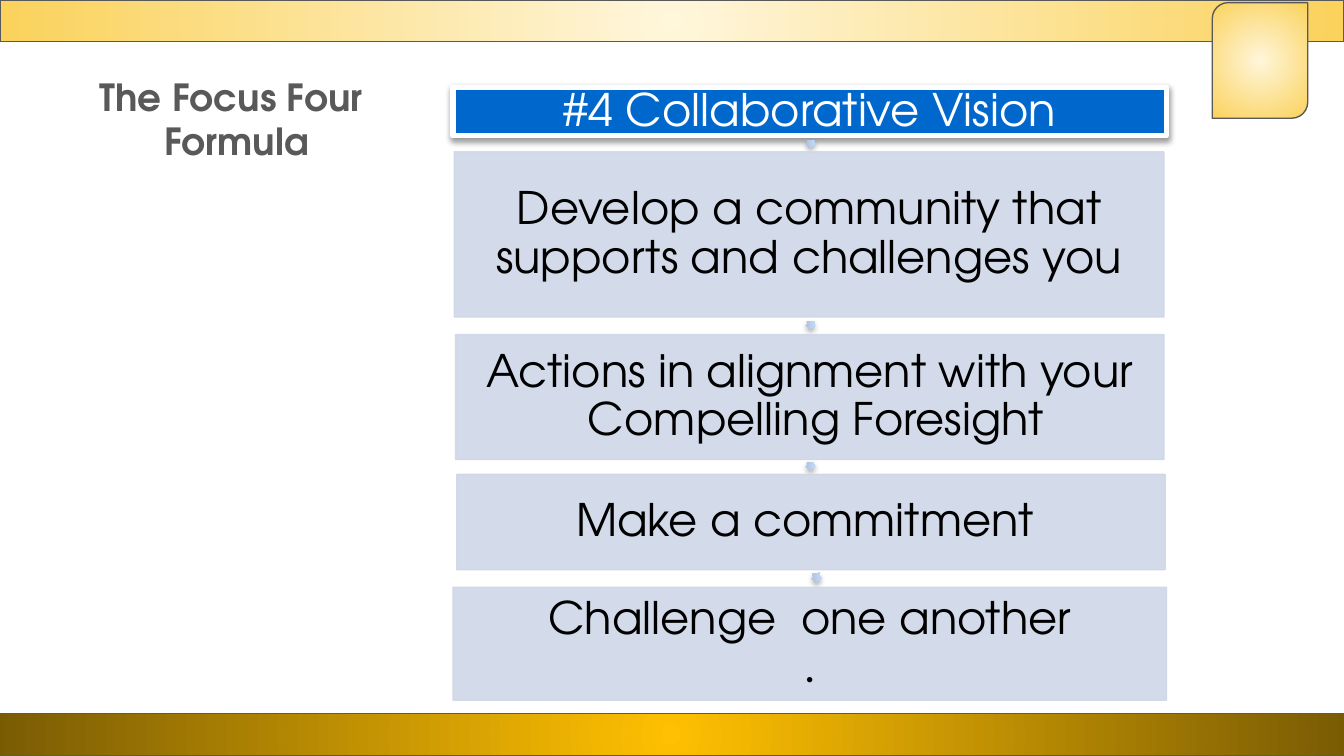
from lxml.etree import SubElement
from pptx import Presentation
from pptx.dml.color import RGBColor
from pptx.enum.shapes import MSO_SHAPE
from pptx.enum.text import MSO_ANCHOR, PP_ALIGN
from pptx.oxml.ns import qn
from pptx.util import Inches, Pt

FONT = "TeX Gyre Adventor"
GREY = "595959"
PALE_GOLD = ("FFF6DB", "FAD25C")
DARK_GOLD = ("FFC002", "795B04")
ARROW_BLUES = ("ABBEDC", "C7DDFF")
STEP_BLUE = "CFD7E7"

# box (left, top, width, height) and lines of each step
STEPS = [
    ((3.38, 1.13, 5.28, 1.23), ["Develop a community that supports and challenges you"]),
    ((3.39, 2.49, 5.27, 0.93), ["Actions in alignment with your", " Compelling Foresight"]),
    ((3.4, 3.53, 5.27, 0.71), ["Make a commitment "]),
    ((3.37, 4.37, 5.31, 0.84), ["Challenge  one another", "."]),
]
# box and rotation of the arrow above each step
ARROWS = [
    ((6, 1.03, 0.06, 0.08), 90),
    ((6, 2.38, 0.06, 0.08), 90),
    ((6, 3.43, 0.06, 0.08), 89.5),
    ((6.04, 4.26, 0.07, 0.08), 85.8),
]


def rgb(color):
    return RGBColor.from_string(color)


def add_shape(slide, kind, box, line=None, width=0.75):
    sp = slide.shapes.add_shape(kind, *map(Inches, box))
    sp.shadow.inherit = False
    if line:
        sp.line.color.rgb = rgb(line)
        sp.line.width = Pt(width)
    else:
        sp.line.fill.background()
    return sp


def fill_solid(sp, color):
    sp.fill.solid()
    sp.fill.fore_color.rgb = rgb(color)


def fill_gradient(sp, colors, radial=False):
    sp.fill.gradient()
    for stop, color in zip(sp.fill.gradient_stops, colors):
        stop.color.rgb = rgb(color)
    if not radial:
        sp.fill.gradient_angle = 90
        return
    grad = sp.element.spPr.find(qn("a:gradFill"))
    grad.remove(grad.find(qn("a:lin")))
    circle = SubElement(grad, qn("a:path"), path="circle")
    SubElement(circle, qn("a:fillToRect"), l="50000", t="50000", r="50000", b="50000")


def set_alpha(sp, percent):
    """Make the solid fill and line of a shape partly transparent."""
    for color in sp.element.spPr.iter(qn("a:srgbClr")):
        SubElement(color, qn("a:alpha"), val=str(percent * 1000))


def add_shadow(sp, distance, percent):
    effects = sp.element.spPr.find(qn("a:effectLst"))
    shadow = SubElement(effects, qn("a:outerShdw"), blurRad=str(Pt(3.1)),
                        dist=str(Pt(distance)), dir="5400000", rotWithShape="0")
    color = SubElement(shadow, qn("a:srgbClr"), val="000000")
    SubElement(color, qn("a:alpha"), val=str(percent * 1000))


def write_lines(tf, lines, size, color, bold=False, spacing=None):
    tf.word_wrap = True
    for i, line in enumerate(lines):
        p = tf.add_paragraph() if i else tf.paragraphs[0]
        p.text = line
        p.alignment = PP_ALIGN.CENTER
        p.line_spacing = spacing
        p.font.size = Pt(size)
        p.font.bold = bold
        p.font.name = FONT
        p.font.color.rgb = rgb(color)


def write_box(sp, lines, color):
    tf = sp.text_frame
    tf.margin_left = tf.margin_right = tf.margin_top = tf.margin_bottom = Inches(0.03)
    tf.vertical_anchor = MSO_ANCHOR.MIDDLE
    write_lines(tf, lines, 24, color, spacing=0.9)


def add_frame(slide):
    """Add the gold bars and the corner tab."""
    for kind, box, colors in [
        (MSO_SHAPE.RECTANGLE, (0, 0, 10, 0.31), PALE_GOLD),
        (MSO_SHAPE.RECTANGLE, (-0.04, 5.31, 10.07, 0.31), DARK_GOLD),
        (MSO_SHAPE.ROUND_2_DIAG_RECTANGLE, (9.02, 0.02, 0.71, 0.86), PALE_GOLD),
    ]:
        fill_gradient(add_shape(slide, kind, box, GREY), colors, radial=True)


def add_title(slide, box):
    tf = slide.shapes.add_textbox(*map(Inches, box)).text_frame
    write_lines(tf, ["The Focus Four ", "Formula"], 20, GREY, bold=True)


def add_heading(slide, box):
    sp = add_shape(slide, MSO_SHAPE.RECTANGLE, box, "FFFFFF", 3)
    fill_solid(sp, "0067CD")
    add_shadow(sp, 1.6, 38)
    write_box(sp, ["#4 Collaborative Vision"], "FFFFFF")


def add_arrow(slide, box, rotation):
    sp = add_shape(slide, MSO_SHAPE.RIGHT_ARROW, box)
    sp.adjustments[0] = 0.67
    sp.rotation = rotation
    fill_gradient(sp, ARROW_BLUES)
    add_shadow(sp, 1.8, 35)


def add_step(slide, box, lines):
    sp = add_shape(slide, MSO_SHAPE.RECTANGLE, box, STEP_BLUE)
    fill_solid(sp, STEP_BLUE)
    set_alpha(sp, 90)
    write_box(sp, lines, "000000")
    return sp


def main():
    prs = Presentation()
    prs.slide_width = Inches(10)
    prs.slide_height = prs.slide_width * 9 // 16
    slide = prs.slides.add_slide(prs.slide_layouts[6])
    add_frame(slide)
    add_heading(slide, (3.37, 0.65, 5.31, 0.36))
    for (arrow_box, rotation), (step_box, lines) in zip(ARROWS, STEPS):
        add_arrow(slide, arrow_box, rotation)
        step = add_step(slide, step_box, lines)
    step.text_frame.paragraphs[-1].font.name = "Calibri"
    add_title(slide, (0.25, 0.5, 3.02, 1.28))
    prs.save("out.pptx")


if __name__ == "__main__":
    main()
